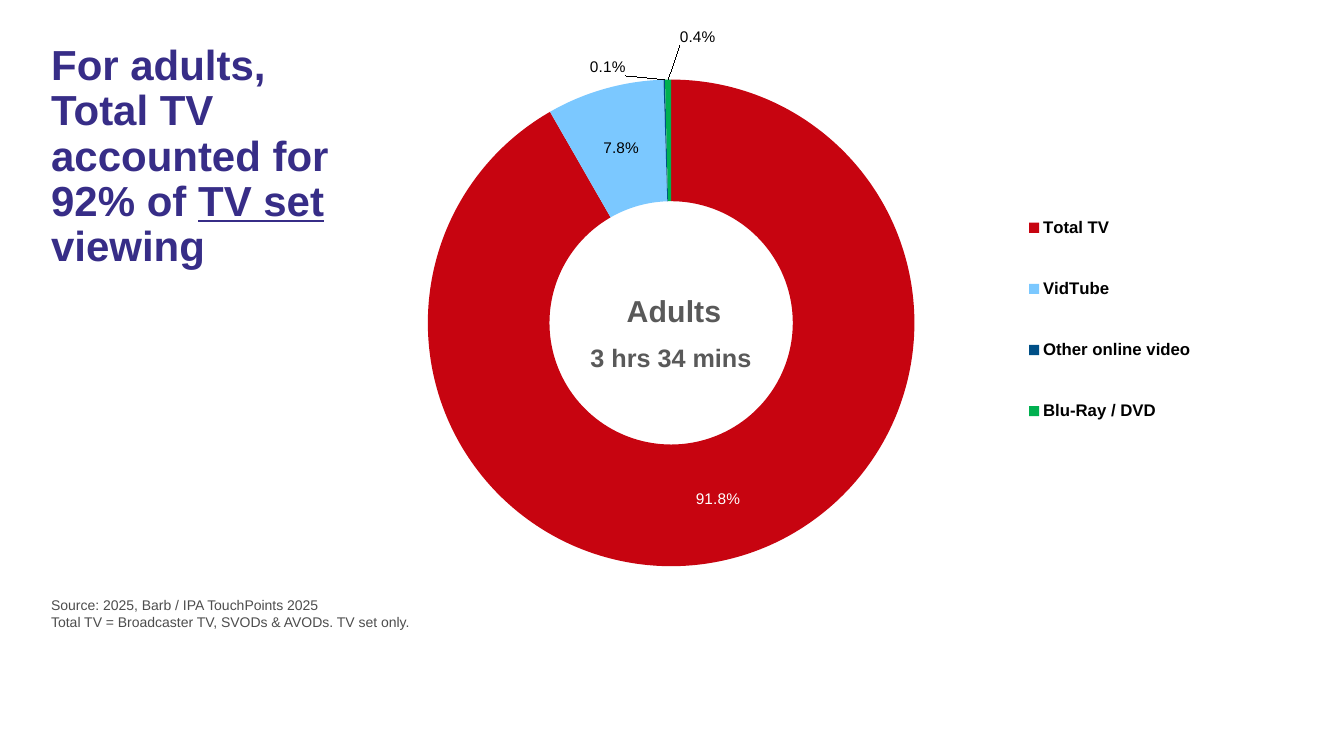
from lxml import etree
from pptx import Presentation
from pptx.chart.data import CategoryChartData
from pptx.dml.color import RGBColor
from pptx.enum.chart import XL_CHART_TYPE, XL_LEGEND_POSITION
from pptx.enum.text import MSO_AUTO_SIZE
from pptx.oxml import parse_xml
from pptx.oxml.ns import nsdecls, qn
from pptx.util import Cm, Pt

DOUGHNUT = XL_CHART_TYPE.DOUGHNUT
LEGEND_RIGHT = XL_LEGEND_POSITION.RIGHT
FIT_SHAPE = MSO_AUTO_SIZE.SHAPE_TO_FIT_TEXT

COLOURS = {
    "heading": "372D87",
    "centre": "595959",
    "source": "4D4D4D",
    "black": "000000",
    "white": "FFFFFF",
    "red": "C70410",
    "sky": "7BC8FF",
    "navy": "004F87",
    "green": "00B050",
}
PERCENT_FORMAT = '0.0"%"'

# category, value, slice colour, label colour, label offset
SLICES = [
    ("Total TV", 91.8, "red", "white", None),
    ("VidTube", 7.8, "sky", "black", None),
    ("Other online video", 0.1, "navy", "black", (-0.06, -0.12)),
    ("Blu-Ray / DVD", 0.4, "green", "black", (0.03, -0.17)),
]


def style_font(font, colour, **values):
    font.name = "Arial"
    font.color.rgb = RGBColor.from_string(COLOURS[colour])
    for name, value in values.items():
        setattr(font, name, value)


def add_text(slide, box, paragraphs, colour, size, wrap=True, spacing=None, bold=False):
    """Add a text box; each paragraph is a list of (text, underlined) runs."""
    frame = slide.shapes.add_textbox(*map(Cm, box)).text_frame
    frame.word_wrap = wrap
    if not wrap:
        frame.auto_size = FIT_SHAPE
    for index, runs in enumerate(paragraphs):
        paragraph = frame.paragraphs[0] if index == 0 else frame.add_paragraph()
        paragraph.line_spacing = spacing
        for text, underlined in runs:
            run = paragraph.add_run()
            run.text = text
            style_font(run.font, colour, size=Pt(size), bold=bold, underline=underlined)


def manual_layout(**values):
    """Build a chart layout element from its child values, in schema order."""
    layout = parse_xml(f"<c:layout {nsdecls('c')}><c:manualLayout/></c:layout>")
    for name, value in values.items():
        etree.SubElement(layout[0], qn(f"c:{name}")).set("val", str(value))
    return layout


def place(element, layout, following):
    """Put the layout in front of the first child that must follow it."""
    for previous in element.findall(qn("c:layout")):
        element.remove(previous)
    for child in element:
        if child.tag in [qn(f"c:{name}") for name in following]:
            child.addprevious(layout)
            return
    element.append(layout)


def format_slice(point, colour, label_colour, offset):
    point.format.fill.solid()
    point.format.fill.fore_color.rgb = RGBColor.from_string(COLOURS[colour])
    style_font(point.data_label.font, label_colour, size=Pt(11))


def format_label(label, offset):
    number_format = parse_xml(f"<c:numFmt {nsdecls('c')} sourceLinked='0'/>")
    number_format.set("formatCode", PERCENT_FORMAT)
    label.insert(1, number_format)
    if offset:
        label.insert(1, manual_layout(x=offset[0], y=offset[1]))


def add_doughnut(slide):
    data = CategoryChartData(number_format="0.0")
    data.categories = [entry[0] for entry in SLICES]
    data.add_series("Adults", [entry[1] for entry in SLICES])
    box = map(Cm, (8.1, 0.41, 24.38, 15.44))
    chart = slide.shapes.add_chart(DOUGHNUT, *box, data).chart
    style_font(chart.font, "black", size=Pt(18))

    chart.has_title = True
    title = chart.chart_title
    title.text_frame.text = "Adults"
    title_font = title.text_frame.paragraphs[0].runs[0].font
    style_font(title_font, "centre", size=Pt(21.6), bold=True)
    title_layout = manual_layout(xMode="edge", yMode="edge", x=0.31, y=0.44)
    title_element = chart.element.find(f".//{qn('c:title')}")
    place(title_element, title_layout, ["overlay"])
    title_element.find(qn("c:overlay")).set("val", "1")

    chart.has_legend = True
    legend = chart.legend
    legend.position = LEGEND_RIGHT
    legend.include_in_layout = False
    style_font(legend.font, "black", size=Pt(12), bold=True)
    legend_layout = manual_layout(xMode="edge", yMode="edge", x=0.72, y=0.26, w=0.19, h=0.47)
    place(chart.element.find(f".//{qn('c:legend')}"), legend_layout, ["overlay", "txPr"])

    plot = chart.plots[0]
    plot.vary_by_categories = True
    plot_layout = manual_layout(layoutTarget="inner", xMode="edge", yMode="edge",
                                x=0.11, y=0.095, w=0.503, h=0.811)
    place(chart.element.find(f".//{qn('c:plotArea')}"), plot_layout, ["doughnutChart"])
    chart.element.find(f".//{qn('c:holeSize')}").set("val", "54")

    series = plot.series[0]
    labels = series.data_labels
    labels.show_value = True
    labels.number_format = PERCENT_FORMAT
    labels.number_format_is_linked = False
    style_font(labels.font, "white", size=Pt(11))
    for index, (_, _, colour, label_colour, offset) in enumerate(SLICES):
        format_slice(series.points[index], colour, label_colour, offset)
    label_elements = chart.element.findall(f".//{qn('c:dLbl')}")
    for label, entry in zip(label_elements, SLICES):
        format_label(label, entry[-1])


def main():
    presentation = Presentation()
    presentation.slide_width, presentation.slide_height = Cm(33.87), Cm(19.05)
    slide = presentation.slides.add_slide(presentation.slide_layouts[6])
    add_doughnut(slide)
    heading = [("For adults, Total TV accounted for 92% of ", False),
               ("TV set ", True), ("viewing", False)]
    add_text(slide, (1.04, 0.99, 8.28, 7.01), [heading], "heading", 30, spacing=0.9, bold=True)
    add_text(slide, (14.63, 8.51, 4.6, 1.02), [[("3 hrs 34 mins", False)]], "centre", 18,
             wrap=False, bold=True)
    source_lines = ["Source: 2025, Barb / IPA TouchPoints 2025",
                    "Total TV = Broadcaster TV, SVODs & AVODs. TV set only."]
    add_text(slide, (1.04, 14.91, 31.5, 0.84), [[(line, False)] for line in source_lines],
             "source", 10)
    presentation.save("out.pptx")


if __name__ == "__main__":
    main()
